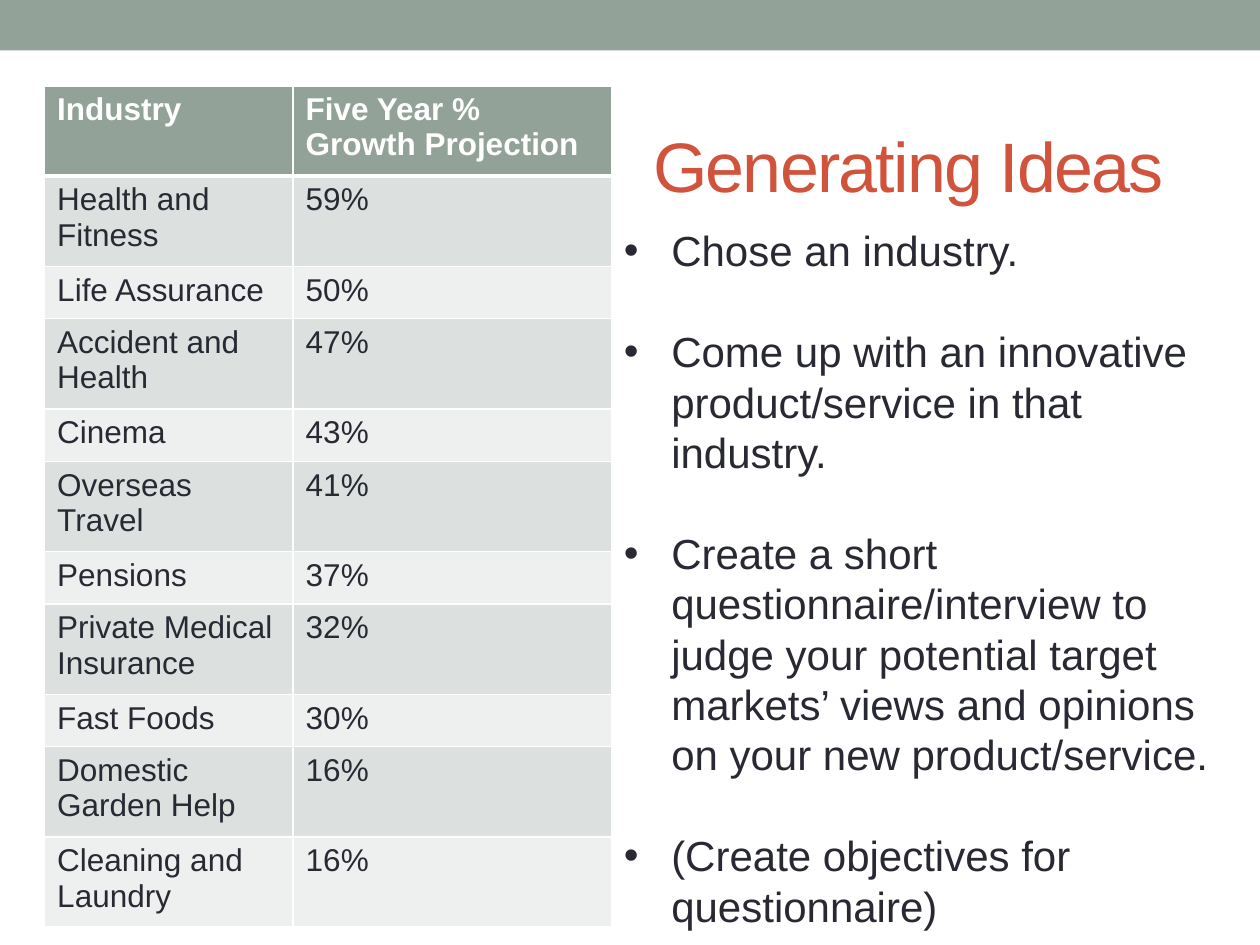
from dataclasses import dataclass

from lxml import etree
from pptx import Presentation
from pptx.dml.color import RGBColor
from pptx.enum.shapes import MSO_SHAPE
from pptx.enum.text import MSO_ANCHOR, PP_ALIGN
from pptx.oxml.ns import qn
from pptx.util import Pt

RECT = MSO_SHAPE.RECTANGLE
MIDDLE = MSO_ANCHOR.MIDDLE
LEFT = PP_ALIGN.LEFT
TITLE_ONLY = 5


@dataclass(frozen=True)
class Theme:
    """Colours, font and type sizes of the slide."""
    font: str = "Arial"
    sage: str = "93A299"
    band_dark: str = "DCE0DE"
    band_light: str = "EEF0EF"
    white: str = "FFFFFF"
    ink: str = "292934"
    red: str = "D2533C"
    title_size: float = 40
    body_size: float = 24
    table_size: float = 18


THEME = Theme()
INDUSTRIES = [
    ("Industry", "Five Year % Growth Projection"),
    ("Health and Fitness", "59%"),
    ("Life Assurance", "50%"),
    ("Accident and Health", "47%"),
    ("Cinema", "43%"),
    ("Overseas Travel", "41%"),
    ("Pensions", "37%"),
    ("Private Medical Insurance", "32%"),
    ("Fast Foods", "30%"),
    ("Domestic Garden Help", "16%"),
    ("Cleaning and Laundry", "16%"),
]
ONE_LINE_ROWS = {"Life Assurance", "Cinema", "Pensions", "Fast Foods"}
STEPS = [
    "Chose an industry.",
    "Come up with an innovative product/service in that industry.",
    "Create a short questionnaire/interview to judge your potential target "
    "markets’ views and opinions on your new product/service.",
    "(Create objectives for questionnaire)",
]


def write(p, text, size, color, bold=False, tracking=None):
    """Add a formatted run to a paragraph."""
    p.alignment = LEFT
    r = p.add_run()
    r.text = text
    r.font.name = THEME.font
    r.font.size = Pt(size)
    r.font.bold = bold
    r.font.color.rgb = RGBColor.from_string(color)
    if tracking is not None:
        r.font._element.set("spc", str(int(tracking * 100)))


def paint(fill, color):
    """Give a fill one solid colour."""
    fill.solid()
    fill.fore_color.rgb = RGBColor.from_string(color)


def add_bar(s, x, y, w, h):
    """Place the coloured band."""
    sp = s.shapes.add_shape(RECT, Pt(x), Pt(y), Pt(w), Pt(h))
    sp.shadow.inherit = False
    paint(sp.fill, THEME.sage)
    sp.line.fill.background()


def add_title(s, x, y, w, h, text):
    """Move and format the title placeholder."""
    sp = s.shapes.title
    sp.left, sp.top, sp.width, sp.height = Pt(x), Pt(y), Pt(w), Pt(h)
    tf = sp.text_frame
    tf.word_wrap = True
    tf.vertical_anchor = MIDDLE
    write(tf.paragraphs[0], text, THEME.title_size, THEME.red, tracking=-1)


def set_borders(cell, **widths):
    """Draw white cell borders with widths in points by side."""
    tcPr = cell._tc.get_or_add_tcPr()
    for side, width in widths.items():
        ln = etree.SubElement(tcPr, qn(f"a:ln{side}"), w=str(Pt(width)))
        fill = etree.SubElement(ln, qn("a:solidFill"))
        etree.SubElement(fill, qn("a:srgbClr"), val=THEME.white)


def add_growth_table(s, x, y, w, h):
    """Place the industry growth table."""
    table = s.shapes.add_table(len(INDUSTRIES), 2, Pt(x), Pt(y), Pt(w), Pt(h)).table
    name_w = round(w * 0.438)
    table.columns[0].width, table.columns[1].width = Pt(name_w), Pt(w - name_w)
    short = 29.9
    tall = (h - short * len(ONE_LINE_ROWS)) / (len(INDUSTRIES) - len(ONE_LINE_ROWS))
    for i, row in enumerate(INDUSTRIES):
        table.rows[i].height = Pt(short if row[0] in ONE_LINE_ROWS else tall)
        header = i == 0
        band = THEME.band_dark if i % 2 else THEME.band_light
        for j, text in enumerate(row):
            cell = table.cell(i, j)
            set_borders(cell, L=1, R=1, T=3 if i == 1 else 1, B=3 if header else 1)
            paint(cell.fill, THEME.sage if header else band)
            write(cell.text_frame.paragraphs[0], text, THEME.table_size,
                  THEME.white if header else THEME.ink, bold=header)


def add_steps(s, x, y, w, h):
    """Place the bulleted list of steps."""
    tf = s.shapes.add_textbox(Pt(x), Pt(y), Pt(w), Pt(h)).text_frame
    tf.word_wrap = True
    line = THEME.body_size * 1.2
    for i, text in enumerate(STEPS):
        p = tf.add_paragraph() if i else tf.paragraphs[0]
        p.line_spacing = Pt(line)
        p.space_before = Pt(line if i else 0)
        write(p, text, THEME.body_size, THEME.ink)
        pPr = p._p.get_or_add_pPr()
        pPr.set("marL", str(Pt(27)))
        pPr.set("indent", str(-Pt(27)))
        etree.SubElement(pPr, qn("a:buFont"), typeface=THEME.font)
        etree.SubElement(pPr, qn("a:buChar"), char="•")


def main():
    """Build and save the slide."""
    prs = Presentation()
    prs.slide_width, prs.slide_height = Pt(720), Pt(540)
    s = prs.slides.add_slide(prs.slide_layouts[TITLE_ONLY])
    add_bar(s, 0, 0, 720, 28.8)
    add_title(s, 366, 55, 324, 78, "Generating Ideas")
    add_growth_table(s, 25.5, 49, 324, 481)
    add_steps(s, 349.5, 125, 357, 415)
    prs.save("out.pptx")


if __name__ == "__main__":
    main()
